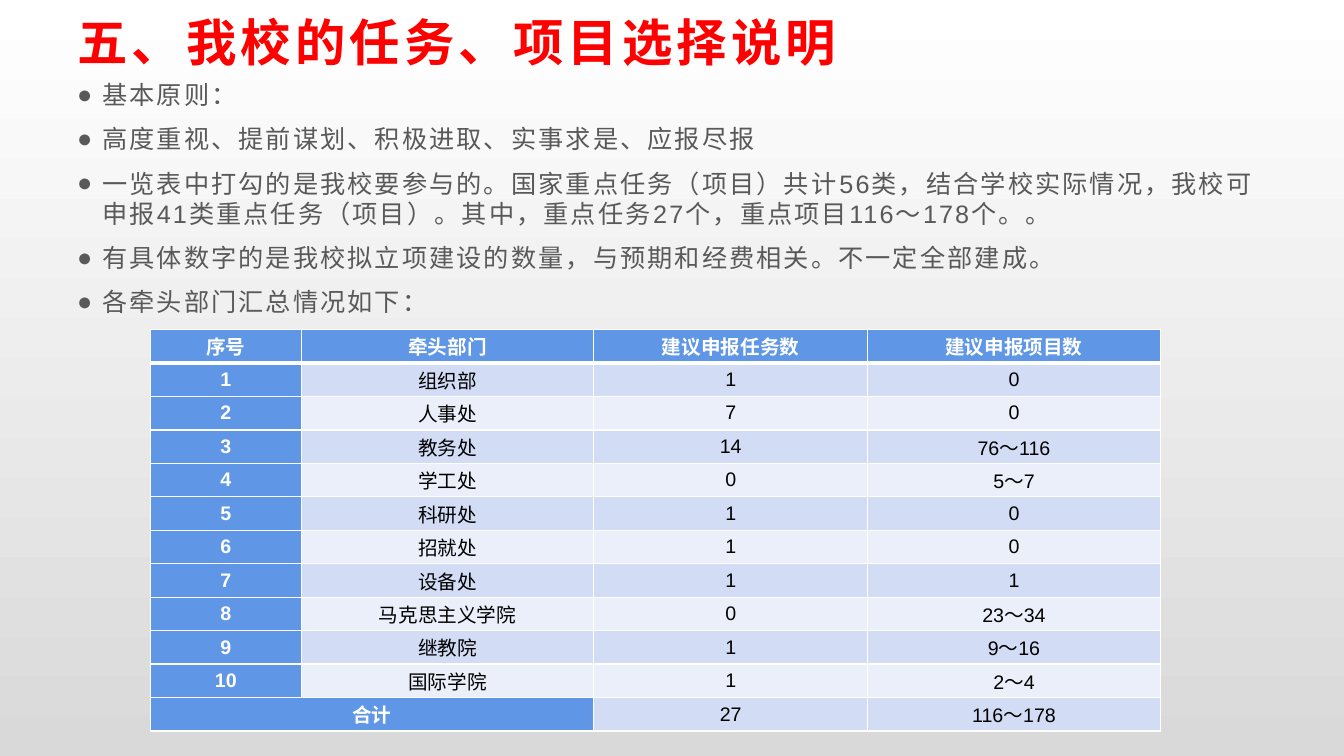
"""Build the slide on the choice of tasks and projects, with a table by department."""
from dataclasses import dataclass
from typing import Any

from lxml import etree
from pptx import Presentation
from pptx import util as u
from pptx.dml.color import RGBColor
from pptx.enum import text
from pptx.oxml import ns

HUES = {"title": "FF0000", "body": "595959", "head": "6096E6", "odd": "D2DDF5",
        "even": "EAEFFA", "white": "FFFFFF", "black": "000000", "grey": "D9D9D9"}
ROWS = [
    ("序号", "牵头部门", "建议申报任务数", "建议申报项目数"),
    ("1", "组织部", "1", "0"),
    ("2", "人事处", "7", "0"),
    ("3", "教务处", "14", "76～116"),
    ("4", "学工处", "0", "5～7"),
    ("5", "科研处", "1", "0"),
    ("6", "招就处", "1", "0"),
    ("7", "设备处", "1", "1"),
    ("8", "马克思主义学院", "0", "23～34"),
    ("9", "继教院", "1", "9～16"),
    ("10", "国际学院", "1", "2～4"),
    ("合计", "", "27", "116～178"),
]
WIDTHS = (108, 208.8, 195.8, 208.8)
HIGH = 23.9


@dataclass
class Block:
    """A text box with its lines and format."""
    top: float
    high: float
    lines: tuple[str, ...]
    size: float
    hue: str
    gap: float
    bold: bool = False
    dots: bool = False
    anchor: Any = text.MSO_ANCHOR.TOP


BLOCKS = (
    Block(2.2, 55.4, ("五、我校的任务、项目选择说明",), 36, "title", 300,
          bold=True, anchor=text.MSO_ANCHOR.MIDDLE),
    Block(53.3, 374.4, (
        "基本原则：",
        "高度重视、提前谋划、积极进取、实事求是、应报尽报",
        "一览表中打勾的是我校要参与的。国家重点任务（项目）共计56类，结合学校实际情况，"
        "我校可申报41类重点任务（项目）。其中，重点任务27个，重点项目116～178个。。",
        "有具体数字的是我校拟立项建设的数量，与预期和经费相关。不一定全部建成。",
        "各牵头部门汇总情况如下：",
    ), 18, "body", 150, dots=True),
)


def tint(hue: str) -> RGBColor:
    """Return the named colour."""
    return RGBColor.from_string(HUES[hue])


def apply(item: Any, form: dict[str, Any]) -> None:
    """Set each format value on the item."""
    for key, val in form.items():
        setattr(item, key, val)


def write(para: Any, line: str, size: float, hue: str, bold: bool) -> Any:
    """Add a run of text to the paragraph."""
    run = para.add_run()
    run.text = line
    apply(run.font, {"name": "Arial", "size": u.Pt(size), "bold": bold})
    run.font.color.rgb = tint(hue)
    return run


def dot(para: Any) -> None:
    """Give the paragraph a round bullet and a hanging indent."""
    para.space_after = u.Pt(10)
    prop = para._p.get_or_add_pPr()
    prop.set("marL", str(u.Pt(18)))
    prop.set("indent", str(-u.Pt(18)))
    etree.SubElement(prop, ns.qn("a:buFont")).set("typeface", "Arial")
    etree.SubElement(prop, ns.qn("a:buChar")).set("char", "●")


def draw_block(slide: Any, block: Block) -> None:
    """Draw a text box."""
    box = slide.shapes.add_textbox(u.Pt(48), u.Pt(block.top), u.Pt(864), u.Pt(block.high))
    frame = box.text_frame
    apply(frame, {"word_wrap": True, "vertical_anchor": block.anchor})
    for i, line in enumerate(block.lines):
        para = frame.add_paragraph() if i else frame.paragraphs[0]
        run = write(para, line, block.size, block.hue, block.bold)
        run.font._element.set("spc", str(block.gap))
        if block.dots:
            dot(para)


def edge(cell: Any, row: int) -> None:
    """Draw white borders, thick under the header."""
    wide = {"lnL": 1, "lnR": 1, "lnT": 3 if row == 1 else 1, "lnB": 1 if row else 3}
    prop = cell._tc.get_or_add_tcPr()
    for i, (side, size) in enumerate(wide.items()):
        line = etree.Element(ns.qn(f"a:{side}"), w=str(u.Pt(size)))
        fill = etree.SubElement(line, ns.qn("a:solidFill"))
        etree.SubElement(fill, ns.qn("a:srgbClr")).set("val", HUES["white"])
        prop.insert(i, line)


def draw_cell(cell: Any, row: int, col: int, word: str) -> None:
    """Fill and write one cell."""
    head = row == 0 or col == 0
    apply(cell, {"margin_left": u.Pt(5), "margin_right": u.Pt(5), "margin_top": 0,
                 "margin_bottom": 0, "vertical_anchor": text.MSO_ANCHOR.MIDDLE})
    cell.fill.solid()
    cell.fill.fore_color.rgb = tint("head" if head else "odd" if row % 2 else "even")
    edge(cell, row)
    if word:
        para = cell.text_frame.paragraphs[0]
        para.alignment = text.PP_ALIGN.CENTER
        write(para, word, 14, "white" if head else "black", head)


def draw_table(slide: Any) -> None:
    """Draw the table of departments."""
    grid = slide.shapes.add_table(len(ROWS), len(WIDTHS), u.Pt(107.3), u.Pt(235.4),
                                  u.Pt(sum(WIDTHS)), u.Pt(HIGH * len(ROWS))).table
    apply(grid, {"first_col": True, "horz_banding": False})
    for col, wide in zip(grid.columns, WIDTHS):
        col.width = u.Pt(wide)
    for i, words in enumerate(ROWS):
        grid.rows[i].height = u.Pt(HIGH)
        for j, word in enumerate(words):
            draw_cell(grid.cell(i, j), i, j, word)
    last = len(ROWS) - 1
    grid.cell(last, 0).merge(grid.cell(last, 1))


def main() -> None:
    """Build and save the slide."""
    deck = Presentation()
    apply(deck, {"slide_width": u.Pt(960), "slide_height": u.Pt(540)})
    slide = deck.slides.add_slide(deck.slide_layouts[6])
    back = slide.background.fill
    back.gradient()
    back.gradient_angle = 270
    for stop, hue, place in zip(back.gradient_stops, ("white", "grey"), (0, 1)):
        stop.color.rgb = tint(hue)
        stop.position = place
    for block in BLOCKS:
        draw_block(slide, block)
    draw_table(slide)
    deck.save("out.pptx")


if __name__ == "__main__":
    main()
